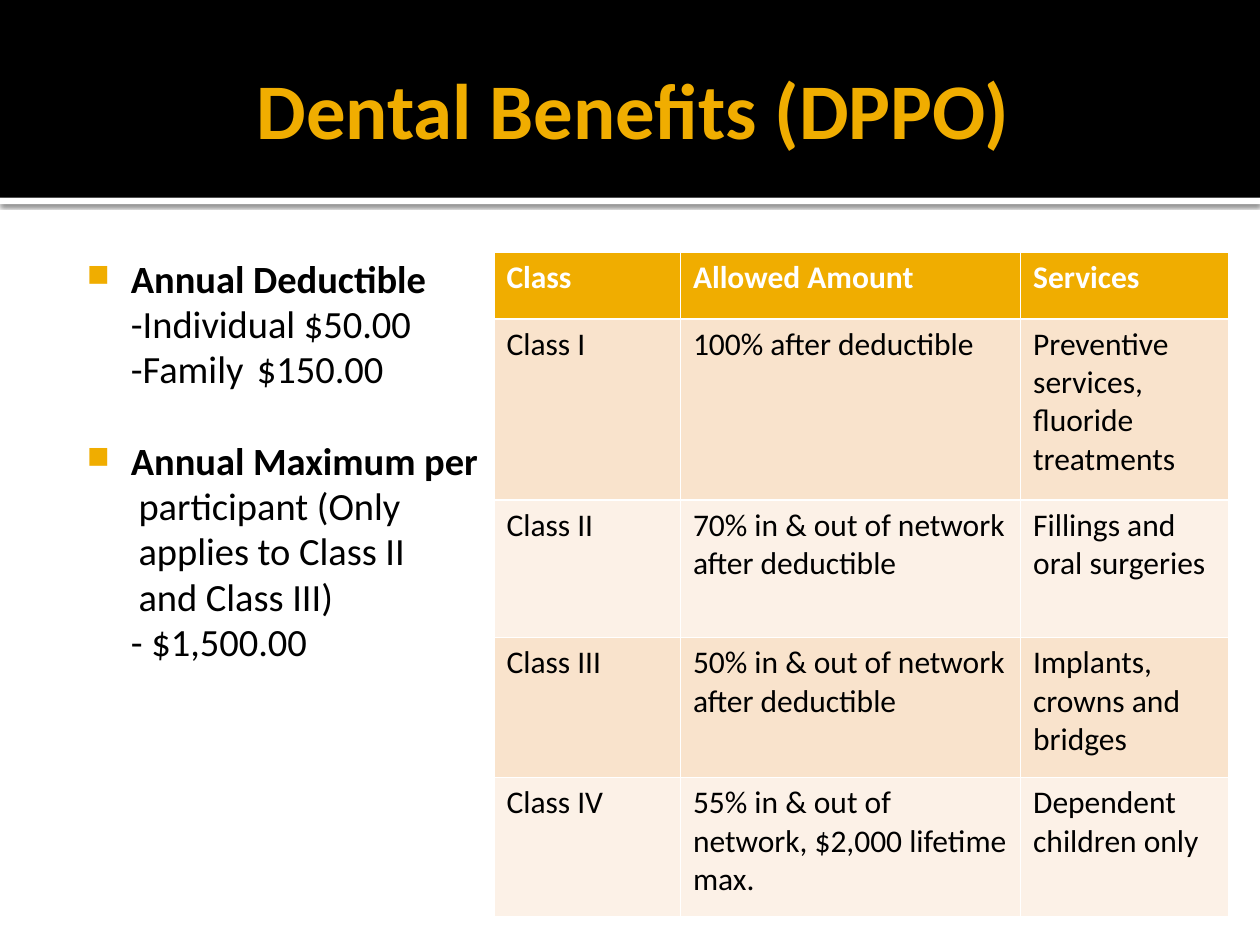
from lxml import etree
from pptx import Presentation
from pptx.dml.color import RGBColor
from pptx.enum.shapes import MSO_SHAPE
from pptx.enum.text import MSO_ANCHOR, PP_ALIGN
from pptx.oxml.ns import qn
from pptx.util import Inches, Pt

RECTANGLE = MSO_SHAPE.RECTANGLE
MIDDLE, TOP = MSO_ANCHOR.MIDDLE, MSO_ANCHOR.TOP
CENTER = PP_ALIGN.CENTER
FONT = "Calibri"
GOLD, BLACK, WHITE = "F0AD00", "000000", "FFFFFF"
BANDS = ("F9E3CC", "FCF1E7")

HEADING, DETAIL, NOTE = "heading", "detail", "note"
BENEFITS = [
    (HEADING, "Annual Deductible"),
    (DETAIL, "-Individual $50.00"),
    (DETAIL, "-Family\t$150.00"),
    (HEADING, "Annual Maximum per"),
    (NOTE, "participant (Only"),
    (NOTE, "applies to Class II"),
    (NOTE, "and Class III)"),
    (DETAIL, "- $1,500.00"),
]
COVERAGE = [
    ("Class", "Allowed Amount", "Services"),
    ("Class I", "100% after deductible", "Preventive services, fluoride treatments"),
    ("Class II", "70% in & out of network after deductible", "Fillings and oral surgeries"),
    ("Class III", "50% in & out of network after deductible", "Implants, crowns and bridges"),
    ("Class IV", "55% in & out of network, $2,000 lifetime max.", "Dependent children only"),
]
COLUMN_WIDTHS = (1.48, 2.7, 1.65)
ROW_HEIGHTS = (0.53, 1.44, 1.09, 1.11, 1.11)


def color(value):
    """Return the colour for a hex string."""
    return RGBColor.from_string(value)


def format_text(para, size, value, bold):
    """Format every run of a paragraph."""
    for span in para.runs:
        span.font.name = FONT
        span.font.size = Pt(size)
        span.font.bold = bold
        span.font.color.rgb = color(value)


def add_bar(page, left, top, width, height, fill):
    """Add a plain bar behind the title and return it."""
    bar = page.shapes.add_shape(RECTANGLE, Inches(left), Inches(top), Inches(width), Inches(height))
    bar.shadow.inherit = False
    bar.fill.solid()
    bar.fill.fore_color.rgb = color(fill)
    bar.line.fill.background()
    page.shapes.title.element.addprevious(bar.element)
    return bar


def add_shadow(shape):
    """Give a shape a soft shadow that falls straight down."""
    effects = shape.element.spPr.find(qn("a:effectLst"))
    shadow = etree.SubElement(effects, qn("a:outerShdw"), blurRad=str(Pt(2.5)),
                              dist=str(Pt(0.8)), dir="5400000", algn="t", rotWithShape="0")
    tint = etree.SubElement(shadow, qn("a:srgbClr"), val=BLACK)
    etree.SubElement(tint, qn("a:alpha"), val="60000")


def add_header(page, left, top, width, height):
    """Draw the banner and place the title on it."""
    add_shadow(add_bar(page, left, top + height, width, 0.05, WHITE))
    add_bar(page, left, top, width, height, BLACK)
    title = page.shapes.title
    title.left, title.top = Inches(left + 0.5), Inches(top + 0.17)
    title.width, title.height = Inches(width - 1), Inches(1.37)
    frame = title.text_frame
    frame.text = "Dental Benefits (DPPO)"
    frame.vertical_anchor = MIDDLE
    frame.margin_left = Inches(0.1)
    frame.margin_right = frame.margin_top = frame.margin_bottom = Inches(0.05)
    para = frame.paragraphs[0]
    para.alignment = CENTER
    format_text(para, 45, GOLD, True)


def set_indent(para, kind):
    """Set the indent, bullet and tab stop of a benefit line."""
    props = para._p.get_or_add_pPr()
    props.set("marL", str(Inches(0.54 if kind == NOTE else 0.48)))
    props.set("indent", str(Inches(-0.35 if kind == HEADING else 0)))
    if kind == HEADING:
        tint = etree.SubElement(props, qn("a:buClr"))
        etree.SubElement(tint, qn("a:srgbClr"), val=GOLD)
        etree.SubElement(props, qn("a:buSzPct"), val="80000")
        etree.SubElement(props, qn("a:buChar"), char="■")
    else:
        etree.SubElement(props, qn("a:buNone"))
    if "\t" in para.text:
        tabs = etree.SubElement(props, qn("a:tabLst"))
        etree.SubElement(tabs, qn("a:tab"), pos=str(Inches(1.72)), algn="l")


def add_benefits(page, left, top, width, height):
    """Add the list of deductibles and maximums."""
    box = page.shapes.add_textbox(Inches(left), Inches(top), Inches(width), Inches(height))
    frame = box.text_frame
    frame.word_wrap = True
    frame.vertical_anchor = TOP
    frame.margin_left, frame.margin_top = Inches(0.06), Inches(0.1)
    frame.margin_right, frame.margin_bottom = Inches(0.1), Inches(0.05)
    frame.text = "\n".join(text for _, text in BENEFITS)
    for index, (para, (kind, _)) in enumerate(zip(frame.paragraphs, BENEFITS)):
        set_indent(para, kind)
        para.line_spacing = 0.98
        if kind == HEADING and index:
            para.space_before = Pt(26.5)
        format_text(para, 22, BLACK, kind == HEADING)


def add_coverage(page, left, top, width, height):
    """Add the table of dental classes."""
    table = page.shapes.add_table(len(COVERAGE), len(COLUMN_WIDTHS), Inches(left), Inches(top),
                                  Inches(width), Inches(height)).table
    for column, size in zip(table.columns, COLUMN_WIDTHS):
        column.width = Inches(size)
    for index, (row, size, texts) in enumerate(zip(table.rows, ROW_HEIGHTS, COVERAGE)):
        row.height = Inches(size)
        is_header = index == 0
        for cell, text in zip(row.cells, texts):
            cell.fill.solid()
            cell.fill.fore_color.rgb = color(GOLD if is_header else BANDS[(index - 1) % 2])
            cell.text_frame.text = text
            format_text(cell.text_frame.paragraphs[0], 18, WHITE if is_header else BLACK, is_header)


def main():
    """Build the slide and save the deck."""
    deck = Presentation()
    deck.slide_width, deck.slide_height = Inches(10), Inches(7.5)
    page = deck.slides.add_slide(deck.slide_layouts.get_by_name("Title Only"))
    add_header(page, 0, 0, 10, 1.57)
    add_benefits(page, 0.5, 1.94, 9, 5.06)
    add_coverage(page, 3.92, 2, sum(COLUMN_WIDTHS), sum(ROW_HEIGHTS))
    deck.save("out.pptx")


if __name__ == "__main__":
    main()
